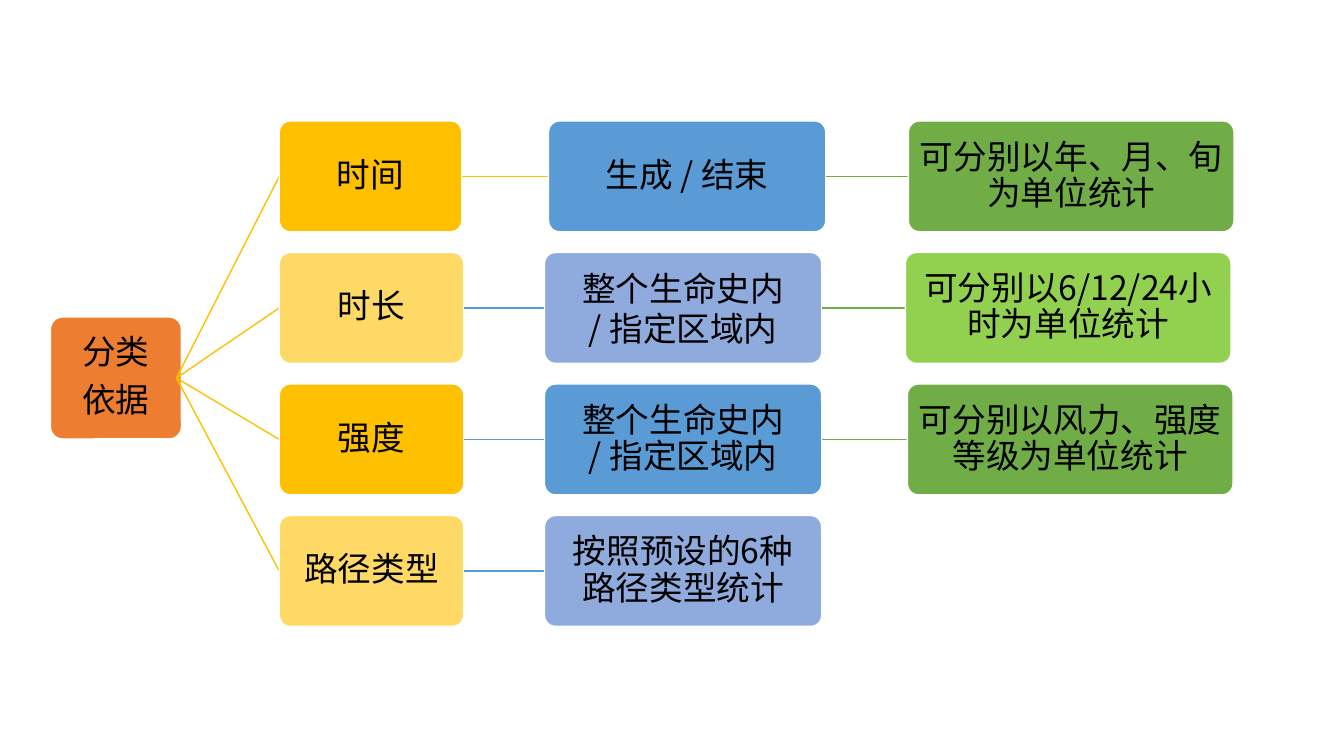
from dataclasses import dataclass

from lxml.etree import SubElement
from pptx import Presentation
from pptx.dml.color import RGBColor
from pptx.enum.shapes import MSO_CONNECTOR as Connector, MSO_SHAPE as Preset
from pptx.enum.text import MSO_ANCHOR as Anchor, PP_ALIGN as Align
from pptx.oxml.ns import qn
from pptx.slide import Slide
from pptx.util import Inches, Pt


@dataclass(frozen=True)
class Theme:
    font: str = "Noto Sans CJK SC"
    size: float = 24
    rule: float = 1
    text: str = "000000"
    edge: str = "FFFFFF"
    orange: str = "ED7D31"
    gold: str = "FFC000"
    pale_gold: str = "FFD966"
    blue: str = "5B9BD5"
    pale_blue: str = "8FAADC"
    green: str = "70AD47"
    lime: str = "92D050"


@dataclass(frozen=True)
class Step:
    """One box of a row, with the link that leads to it from the left."""
    lines: tuple[str, ...]
    fill: str
    width: float
    gap: float
    link: str
    spacing: float = 0.9
    after: float = 0


THEME = Theme()

# Grid in inches: four equal rows, columns set by box widths and gaps
FIRST_ROW, ROW_PITCH, ROW_HEIGHT = 1.2, 1.305, 1.1
FAN_X, TOPIC_X = 1.75, 2.77
ROOT_X, ROOT_WIDTH, ROOT_HEIGHT = 0.5, 1.3, 1.21
FAN_Y = 3.75
INSET = 0.02
PARAGRAPH_GAP = 0.35 * THEME.size


def topic(name: str, fill: str, width: float = 1.83) -> Step:
    return Step((name,), fill, width, TOPIC_X - FAN_X, THEME.gold)


def method(*lines: str, fill: str, gap: float = 0.8,
           link: str = THEME.blue, spacing: float = 0.9) -> Step:
    return Step(lines, fill, 2.75, gap, link, spacing)


def unit(text: str, fill: str, gap: float) -> Step:
    return Step((text,), fill, 3.23, gap, THEME.green)


ROOT = Step(("分类", "依据"), THEME.orange, ROOT_WIDTH, 0, THEME.gold,
            after=PARAGRAPH_GAP)
ROWS = (
    (topic("时间", THEME.gold, 1.81),
     method("生成 / 结束", fill=THEME.blue, gap=0.86, link=THEME.gold),
     unit("可分别以年、月、旬为单位统计", THEME.green, 0.82)),
    (topic("时长", THEME.pale_gold),
     method("整个生命史内", "/ 指定区域内", fill=THEME.pale_blue, spacing=1),
     unit("可分别以6/12/24小时为单位统计", THEME.lime, 0.83)),
    (topic("强度", THEME.gold),
     method("整个生命史内", "/ 指定区域内", fill=THEME.blue),
     unit("可分别以风力、强度等级为单位统计", THEME.green, 0.85)),
    (topic("路径类型", THEME.pale_gold),
     method("按照预设的6种", "路径类型统计", fill=THEME.pale_blue)),
)


def draw_box(slide: Slide, step: Step, x: float, middle: float, height: float) -> None:
    box = slide.shapes.add_shape(
        Preset.ROUNDED_RECTANGLE, Inches(x), Inches(middle - height / 2),
        Inches(step.width), Inches(height))
    box.adjustments[0] = 0.1
    box.shadow.inherit = False
    box.fill.solid()
    box.fill.fore_color.rgb = RGBColor.from_string(step.fill)
    box.line.color.rgb = RGBColor.from_string(THEME.edge)
    box.line.width = Pt(THEME.rule)

    frame = box.text_frame
    frame.word_wrap = True
    frame.vertical_anchor = Anchor.MIDDLE
    frame.margin_left = frame.margin_right = Inches(INSET)
    frame.margin_top = frame.margin_bottom = Inches(INSET)
    for index, line in enumerate(step.lines):
        paragraph = frame.add_paragraph() if index else frame.paragraphs[0]
        paragraph.alignment = Align.CENTER
        paragraph.line_spacing = step.spacing
        paragraph.space_after = Pt(step.after)
        run = paragraph.add_run()
        run.text = line
        run.font.size = Pt(THEME.size)
        run.font.name = THEME.font
        run.font.color.rgb = RGBColor.from_string(THEME.text)
        # Chinese glyphs take the East Asian typeface
        SubElement(run.font._element, qn("a:ea"), typeface=THEME.font)


def draw_link(slide: Slide, start: tuple[float, float],
              end: tuple[float, float], color: str) -> None:
    link = slide.shapes.add_connector(
        Connector.STRAIGHT, *(Inches(value) for value in start + end))
    link.line.color.rgb = RGBColor.from_string(color)
    link.line.width = Pt(THEME.rule)
    SubElement(link._element.spPr, qn("a:effectLst"))


def main() -> None:
    deck = Presentation()
    deck.slide_width, deck.slide_height = Inches(13.33), Inches(7.5)
    slide = deck.slides.add_slide(deck.slide_layouts[6])

    # Root of the classification
    draw_box(slide, ROOT, ROOT_X, FAN_Y, ROOT_HEIGHT)

    # One branch per criterion, the first link fanning out from the root
    for index, steps in enumerate(ROWS):
        middle = FIRST_ROW + index * ROW_PITCH + ROW_HEIGHT / 2
        end = (FAN_X, FAN_Y)
        for step in steps:
            left = end[0] + step.gap
            draw_link(slide, end, (left, middle), step.link)
            draw_box(slide, step, left, middle, ROW_HEIGHT)
            end = (left + step.width, middle)

    deck.save("out.pptx")


if __name__ == "__main__":
    main()
